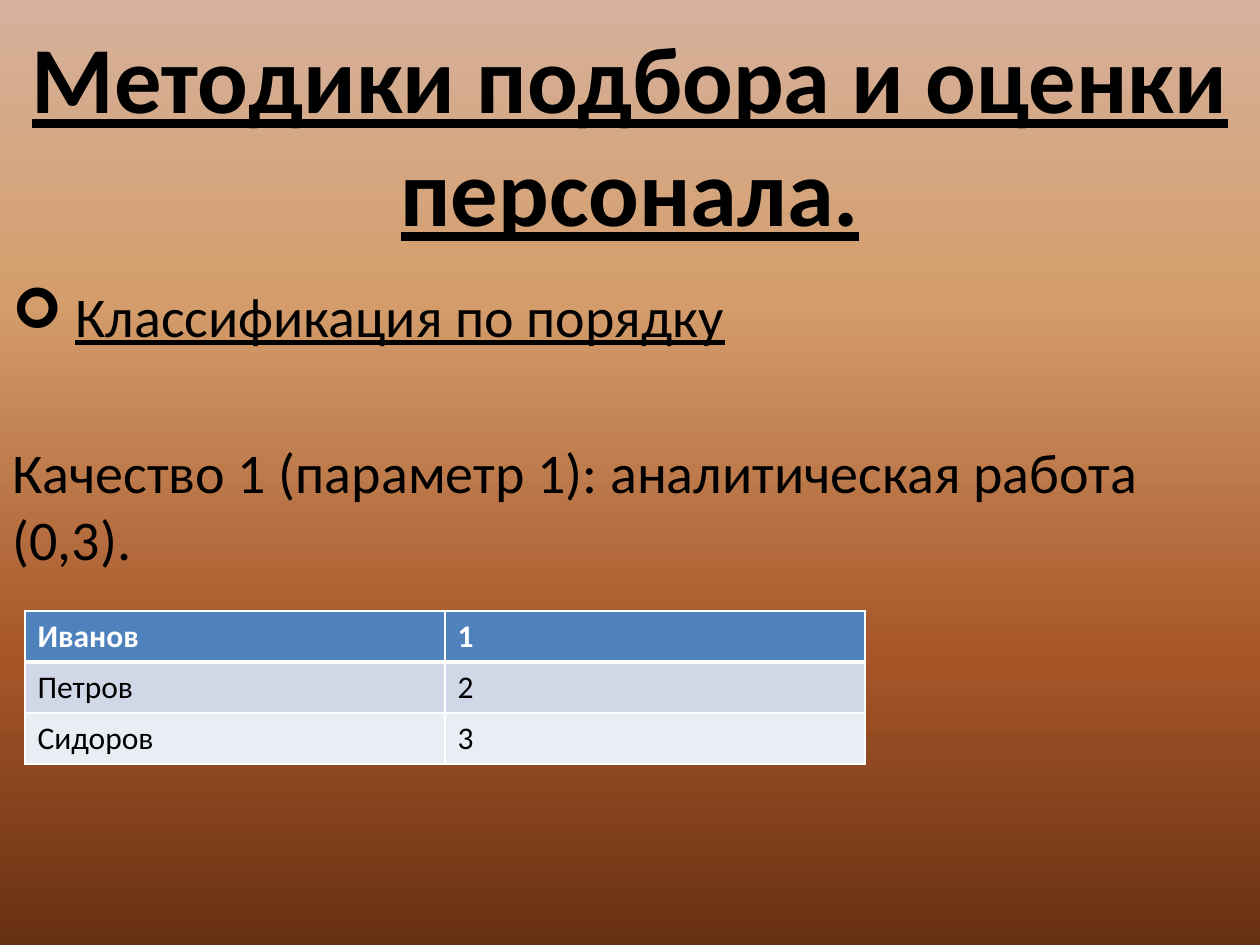
from dataclasses import dataclass

from lxml import etree
from pptx import Presentation
from pptx.dml.color import RGBColor
from pptx.enum.text import MSO_ANCHOR, MSO_AUTO_SIZE, PP_ALIGN
from pptx.oxml.ns import qn
from pptx.util import Pt

MIDDLE, CENTER, NO_FIT = MSO_ANCHOR.MIDDLE, PP_ALIGN.CENTER, MSO_AUTO_SIZE.NONE
TITLE_ONLY = 5
EMU_PER_PX = 914400 / 126


@dataclass(frozen=True)
class Theme:
    font: str = "Calibri"
    ink: str = "000000"
    light: str = "FFFFFF"
    header: str = "4F81BD"
    bands: tuple = ("D0D8E8", "E9EDF4")
    backdrop: tuple = ((0, "D6B19C"), (31, "D49E6C"), (70, "A65528"), (100, "663012"))
    title_size: int = 54
    body_size: int = 32
    table_size: int = 18
    rule: int = 1
    header_rule: int = 3


THEME = Theme()

TITLE = "Методики подбора и оценки персонала."
METHOD = "Классификация по порядку"
QUALITY = "Качество 1 (параметр 1): аналитическая работа (0,3)."
RANKING = [("Иванов", "1"), ("Петров", "2"), ("Сидоров", "3")]

SLIDE_SIZE = (1260, 945)
TITLE_BOX = (0, 0, 1260, 265)
BODY_BOX = (0, 275, 1260, 670)
TABLE_AT = (25, 611)
COLUMN_WIDTH, ROW_HEIGHT = 420, 51
BULLET_INDENT = 63
BODY_GAP, SECTION_GAP = 6, 51  # points


def px(length):
    return round(length * EMU_PER_PX)


def style(para, size, color=THEME.ink, bold=False, underline=False):
    for span in para.runs:
        font = span.font
        font.name, font.size = THEME.font, Pt(size)
        font.bold, font.underline = bold, underline
        font.color.rgb = RGBColor.from_string(color)


def paint_background(slide):
    fill = slide.background.fill
    fill.gradient()
    fill.gradient_angle = 270
    stops = next(slide.element.iter(qn("a:gsLst")))
    for stop in list(stops):
        stops.remove(stop)
    for percent, color in THEME.backdrop:
        stop = etree.SubElement(stops, qn("a:gs"), pos=str(percent * 1000))
        etree.SubElement(stop, qn("a:srgbClr"), val=color)


def add_title(slide):
    title = slide.shapes.title
    title.left, title.top, title.width, title.height = map(px, TITLE_BOX)
    frame = title.text_frame
    frame.text = TITLE
    frame.auto_size, frame.vertical_anchor = NO_FIT, MIDDLE
    para = frame.paragraphs[0]
    para.alignment = CENTER
    style(para, THEME.title_size, bold=True, underline=True)


def add_bullet(para, mark):
    properties = para._p.get_or_add_pPr()
    properties.set("marL", str(px(BULLET_INDENT)))
    properties.set("indent", str(-px(BULLET_INDENT)))
    etree.SubElement(properties, qn("a:buFont"), typeface="Wingdings")
    etree.SubElement(properties, qn("a:buChar"), char=mark)


def add_body(slide):
    frame = slide.shapes.add_textbox(*map(px, BODY_BOX)).text_frame
    frame.word_wrap = True
    method, quality = frame.paragraphs[0], frame.add_paragraph()
    method.text, quality.text = METHOD, QUALITY
    method.space_before, quality.space_before = Pt(BODY_GAP), Pt(SECTION_GAP)
    add_bullet(method, "➢")
    style(method, THEME.body_size, underline=True)
    style(quality, THEME.body_size)


def add_borders(cell, top, bottom):
    properties = cell._tc.get_or_add_tcPr()
    widths = {"L": THEME.rule, "R": THEME.rule, "T": top, "B": bottom}
    for side, width in widths.items():
        line = etree.SubElement(properties, qn(f"a:ln{side}"), w=str(Pt(width)))
        fill = etree.SubElement(line, qn("a:solidFill"))
        etree.SubElement(fill, qn("a:srgbClr"), val=THEME.light)


def add_ranking(slide):
    rows, columns = len(RANKING), len(RANKING[0])
    size = (columns * COLUMN_WIDTH, rows * ROW_HEIGHT)
    table = slide.shapes.add_table(rows, columns, *map(px, TABLE_AT + size)).table
    for r, values in enumerate(RANKING):
        is_header = r == 0
        background = THEME.header if is_header else THEME.bands[(r - 1) % 2]
        top = THEME.header_rule if r == 1 else THEME.rule
        bottom = THEME.header_rule if is_header else THEME.rule
        for c, value in enumerate(values):
            cell = table.cell(r, c)
            cell.text = value
            add_borders(cell, top, bottom)
            cell.fill.solid()
            cell.fill.fore_color.rgb = RGBColor.from_string(background)
            style(cell.text_frame.paragraphs[0], THEME.table_size,
                  THEME.light if is_header else THEME.ink, bold=is_header)


def main():
    deck = Presentation()
    deck.slide_width, deck.slide_height = map(px, SLIDE_SIZE)
    slide = deck.slides.add_slide(deck.slide_layouts[TITLE_ONLY])
    paint_background(slide)
    add_title(slide)
    add_body(slide)
    add_ranking(slide)
    deck.save("out.pptx")


if __name__ == "__main__":
    main()
